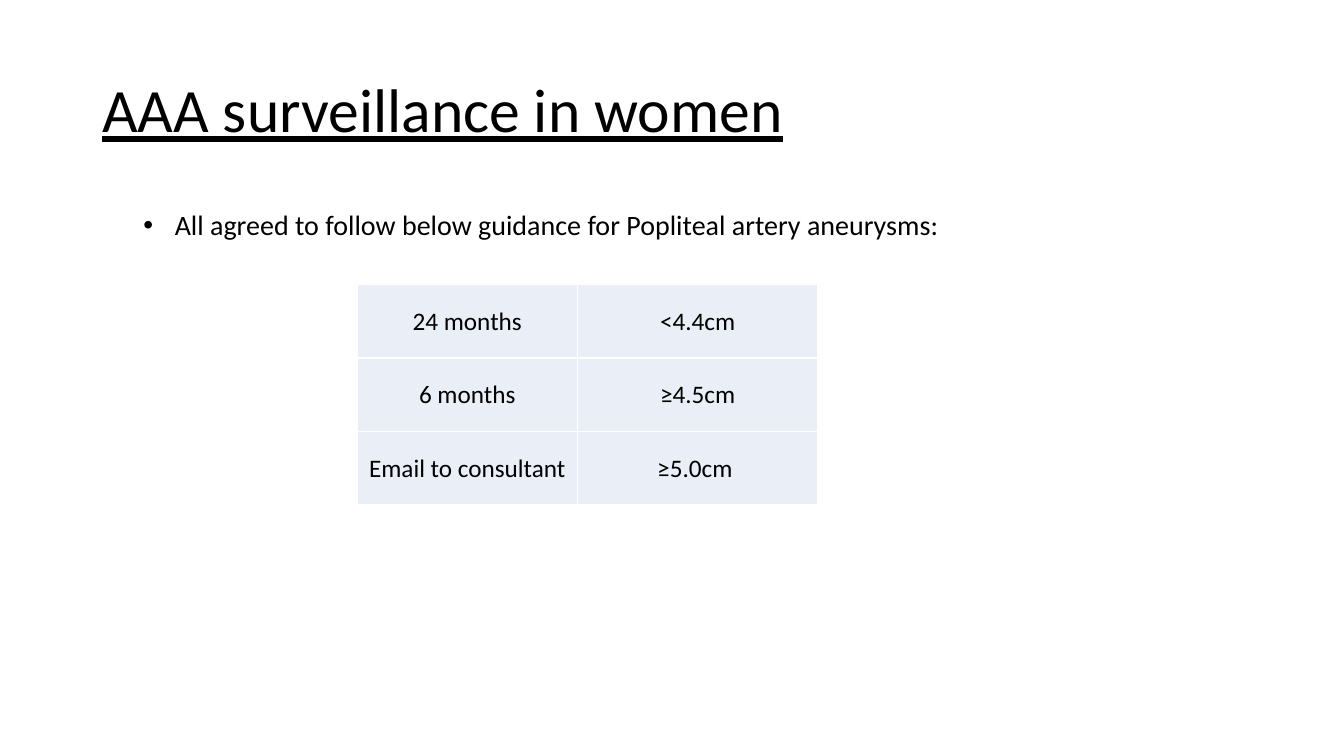
from dataclasses import dataclass

from lxml.etree import SubElement
from pptx import Presentation
from pptx.dml.color import RGBColor as Rgb
from pptx.enum.text import MSO_ANCHOR as Anchor, PP_ALIGN as Align
from pptx.oxml.ns import qn
from pptx.util import Emu, Pt


@dataclass(frozen=True)
class Theme:
    font: str = "Calibri"
    text: Rgb = Rgb(0x00, 0x00, 0x00)
    cell: Rgb = Rgb(0xEA, 0xEF, 0xF7)
    border: str = "FFFFFF"
    border_width: int = 1
    title_size: int = 44
    body_size: int = 20
    table_size: int = 18


THEME = Theme()
EMU_PER_PX = 9525  # 96 px to the inch

SURVEILLANCE = [
    ("24 months", "<4.4cm"),
    ("6 months", "≥4.5cm"),
    ("Email to consultant", "≥5.0cm "),
]


def px(length):
    return Emu(length * EMU_PER_PX)


def set_all(target, formats):
    for name, value in formats.items():
        setattr(target, name, value)


def add_span(para, text, size, **formats):
    span = para.add_run()
    span.text = text
    set_all(span.font, {"name": THEME.font, "size": Pt(size), **formats})
    span.font.color.rgb = THEME.text


def add_text(page, area, text, size, frame_formats, **formats):
    box = page.shapes.add_textbox(*map(px, area))
    set_all(box.text_frame, frame_formats)
    para = box.text_frame.paragraphs[0]
    add_span(para, text, size, **formats)
    return para


def add_bullet(para, indent):
    props = para._p.get_or_add_pPr()
    props.set("marL", str(px(indent)))
    props.set("indent", str(px(-indent)))
    SubElement(props, qn("a:buFont"), typeface="Arial")
    SubElement(props, qn("a:buChar"), char="•")


def add_borders(cell):
    props = cell._tc.get_or_add_tcPr()
    for side in ("lnL", "lnR", "lnT", "lnB"):
        line = SubElement(props, qn(f"a:{side}"), w=str(Pt(THEME.border_width)))
        fill = SubElement(line, qn("a:solidFill"))
        SubElement(fill, qn("a:srgbClr"), val=THEME.border)


def fill_cell(cell, text):
    set_all(cell, {
        "margin_left": px(1), "margin_right": px(1),
        "margin_top": px(1), "margin_bottom": px(0),
        "vertical_anchor": Anchor.MIDDLE,
    })
    add_borders(cell)
    cell.fill.solid()
    cell.fill.fore_color.rgb = THEME.cell
    para = cell.text_frame.paragraphs[0]
    para.alignment = Align.CENTER
    add_span(para, text, THEME.table_size)


def add_grid(page, left, top, widths, row_height, rows):
    area = (left, top, sum(widths), row_height * len(rows))
    table = page.shapes.add_table(len(rows), len(widths), *map(px, area)).table
    set_all(table, {"first_row": False, "horz_banding": False})
    for column, width in zip(table.columns, widths):
        column.width = px(width)
    for row, texts in zip(table.rows, rows):
        row.height = px(row_height)
        for cell, text in zip(row.cells, texts):
            fill_cell(cell, text)


def main():
    deck = Presentation()
    set_all(deck, {"slide_width": px(1280), "slide_height": px(720)})
    page = deck.slides.add_slide(deck.slide_layouts[6])

    # Title
    title = add_text(page, (88, 38, 1104, 139), "AAA surveillance in women",
                     THEME.title_size,
                     {"word_wrap": True, "vertical_anchor": Anchor.MIDDLE},
                     underline=True)
    title.line_spacing = 0.9

    # Surveillance intervals by diameter
    add_grid(page, 340, 271, (210, 229), 70, SURVEILLANCE)

    # Guidance bullet
    guidance = add_text(
        page, (127, 193, 784, 42),
        "All agreed to follow below guidance for Popliteal artery aneurysms:",
        THEME.body_size, {"word_wrap": False})
    add_bullet(guidance, 30)

    deck.save("out.pptx")


if __name__ == "__main__":
    main()
